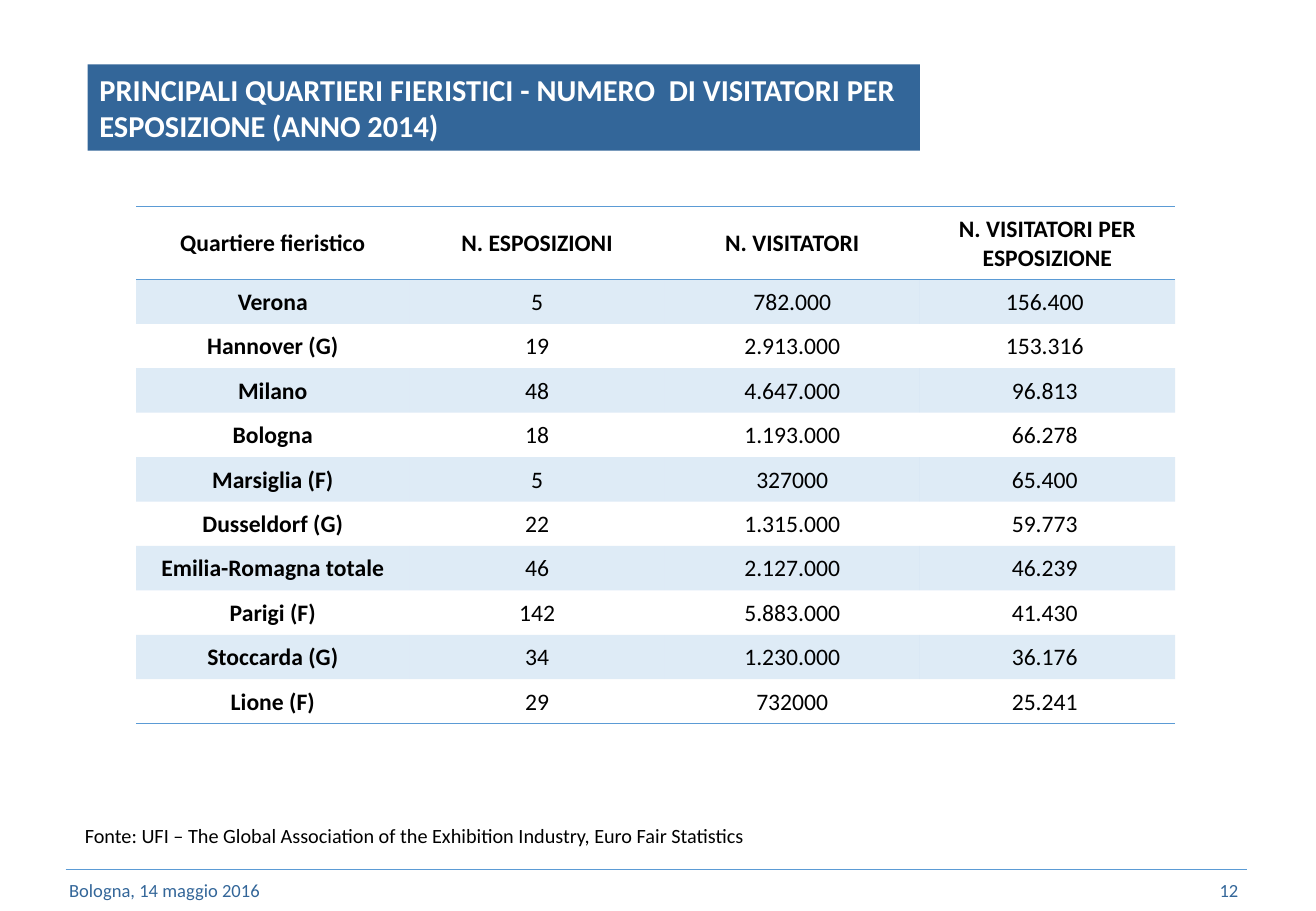
from lxml import etree
from pptx import Presentation
from pptx.dml.color import RGBColor
from pptx.enum.shapes import MSO_CONNECTOR, MSO_SHAPE
from pptx.enum.text import MSO_ANCHOR, PP_ALIGN
from pptx.oxml import parse_xml
from pptx.oxml.ns import nsdecls, qn
from pptx.util import Inches, Pt

LEFT, CENTER, RIGHT = PP_ALIGN.LEFT, PP_ALIGN.CENTER, PP_ALIGN.RIGHT
MIDDLE, TOP = MSO_ANCHOR.MIDDLE, MSO_ANCHOR.TOP
RECTANGLE, STRAIGHT = MSO_SHAPE.RECTANGLE, MSO_CONNECTOR.STRAIGHT

FONT = "Calibri"
NAVY = RGBColor(0x33, 0x66, 0x99)
SKY = RGBColor(0x5B, 0x9B, 0xD5)
BLACK = RGBColor(0, 0, 0)
WHITE = RGBColor(0xFF, 0xFF, 0xFF)
NO_STYLE = "{2D5ABB26-0587-4C30-8999-92F81FD0307C}"

TITLE = "PRINCIPALI QUARTIERI FIERISTICI - NUMERO  DI VISITATORI PER ESPOSIZIONE (ANNO 2014)"
TITLE_AREA = (0.72, 0.53, 6.85, 0.71)
RULE_LEFT, RULE_RIGHT, RULE_Y = 0.54, 10.26, 7.16
NOTES = [
    ("Bologna, 14 maggio 2016", (0.47, 7.16, 2.71, 0.34), 11, NAVY, LEFT, MIDDLE),
    ("12", (7.76, 7.13, 2.53, 0.4), 11, NAVY, RIGHT, MIDDLE),
    ("Fonte: UFI – The Global Association of the Exhibition Industry, Euro Fair Statistics",
     (0.6, 6.73, 9.06, 0.3), 12, BLACK, LEFT, TOP),
]
ROWS = [
    ("Quartiere fieristico", "N. ESPOSIZIONI", "N. VISITATORI", "N. VISITATORI PER ESPOSIZIONE"),
    ("Verona", "5", "782.000", "156.400 "),
    ("Hannover (G)", "19", "2.913.000", "153.316 "),
    ("Milano", "48", "4.647.000", "96.813 "),
    ("Bologna", "18", "1.193.000", "66.278 "),
    ("Marsiglia (F)", "5", "327000", "65.400 "),
    ("Dusseldorf (G)", "22", "1.315.000", "59.773 "),
    ("Emilia-Romagna totale", "46", "2.127.000", "46.239 "),
    ("Parigi (F)", "142", "5.883.000", "41.430 "),
    ("Stoccarda (G)", "34", "1.230.000", "36.176 "),
    ("Lione (F)", "29", "732000", "25.241 "),
]
TABLE_LEFT, TABLE_TOP = 1.12, 1.7
COLUMN_WIDTHS = (2.25, 2.1, 2.1, 2.1)
HEADER_HEIGHT, ROW_HEIGHT = 0.6, 0.366


def write(frame, text, size, color, align, bold=False):
    para = frame.paragraphs[0]
    para.alignment = align
    span = para.add_run()
    span.text = text
    span.font.name = FONT
    span.font.size = Pt(size)
    span.font.bold = bold
    span.font.color.rgb = color


def add_border(cell, side):
    cell._tc.get_or_add_tcPr().append(parse_xml(
        f'<a:ln{side} {nsdecls("a")} w="{Pt(1)}"><a:solidFill>'
        f'<a:srgbClr val="{SKY}"/></a:solidFill></a:ln{side}>'))


def fill_cell(cell, banded):
    if not banded:
        cell.fill.background()
        return
    cell.fill.solid()
    cell.fill.fore_color.rgb = SKY
    tint = cell._tc.tcPr.find(f'{qn("a:solidFill")}/{qn("a:srgbClr")}')
    etree.SubElement(tint, qn("a:alpha")).set("val", "20000")


def add_title(page):
    box = page.shapes.add_shape(RECTANGLE, *map(Inches, TITLE_AREA))
    box.shadow.inherit = False
    box.fill.solid()
    box.fill.fore_color.rgb = NAVY
    box.line.fill.background()
    box.text_frame.word_wrap = True
    box.text_frame.vertical_anchor = MIDDLE
    write(box.text_frame, TITLE, 18, WHITE, LEFT, True)


def add_footer_rule(page):
    rule = page.shapes.add_connector(
        STRAIGHT, *map(Inches, (RULE_LEFT, RULE_Y, RULE_RIGHT, RULE_Y)))
    rule.line.color.rgb = SKY
    rule.line.width = Pt(0.25)
    etree.SubElement(rule._element.spPr, qn("a:effectLst"))


def add_visitors_table(page):
    heights = [HEADER_HEIGHT] + [ROW_HEIGHT] * (len(ROWS) - 1)
    area = (TABLE_LEFT, TABLE_TOP, sum(COLUMN_WIDTHS), sum(heights))
    table = page.shapes.add_table(
        len(ROWS), len(COLUMN_WIDTHS), *map(Inches, area)).table
    table._tbl.tblPr.find(qn("a:tableStyleId")).text = NO_STYLE
    table.horz_banding = False
    for column, width in zip(table.columns, COLUMN_WIDTHS):
        column.width = Inches(width)
    for r, values in enumerate(ROWS):
        table.rows[r].height = Inches(heights[r])
        for c, value in enumerate(values):
            cell = table.cell(r, c)
            cell.vertical_anchor = MIDDLE
            cell.margin_left = cell.margin_right = cell.margin_top = Inches(0.01)
            cell.margin_bottom = 0
            if r == 0:
                add_border(cell, "T")
            if r in (0, len(ROWS) - 1):
                add_border(cell, "B")
            fill_cell(cell, r % 2 == 1)
            write(cell.text_frame, value, 14, BLACK, CENTER, r == 0 or c == 0)


def main():
    deck = Presentation()
    deck.slide_width, deck.slide_height = Inches(10.83), Inches(7.5)
    page = deck.slides.add_slide(deck.slide_layouts[6])
    add_footer_rule(page)
    add_title(page)
    for text, area, size, color, align, anchor in NOTES:
        box = page.shapes.add_textbox(*map(Inches, area))
        box.text_frame.word_wrap = True
        box.text_frame.vertical_anchor = anchor
        write(box.text_frame, text, size, color, align)
    add_visitors_table(page)
    deck.save("out.pptx")


if __name__ == "__main__":
    main()
